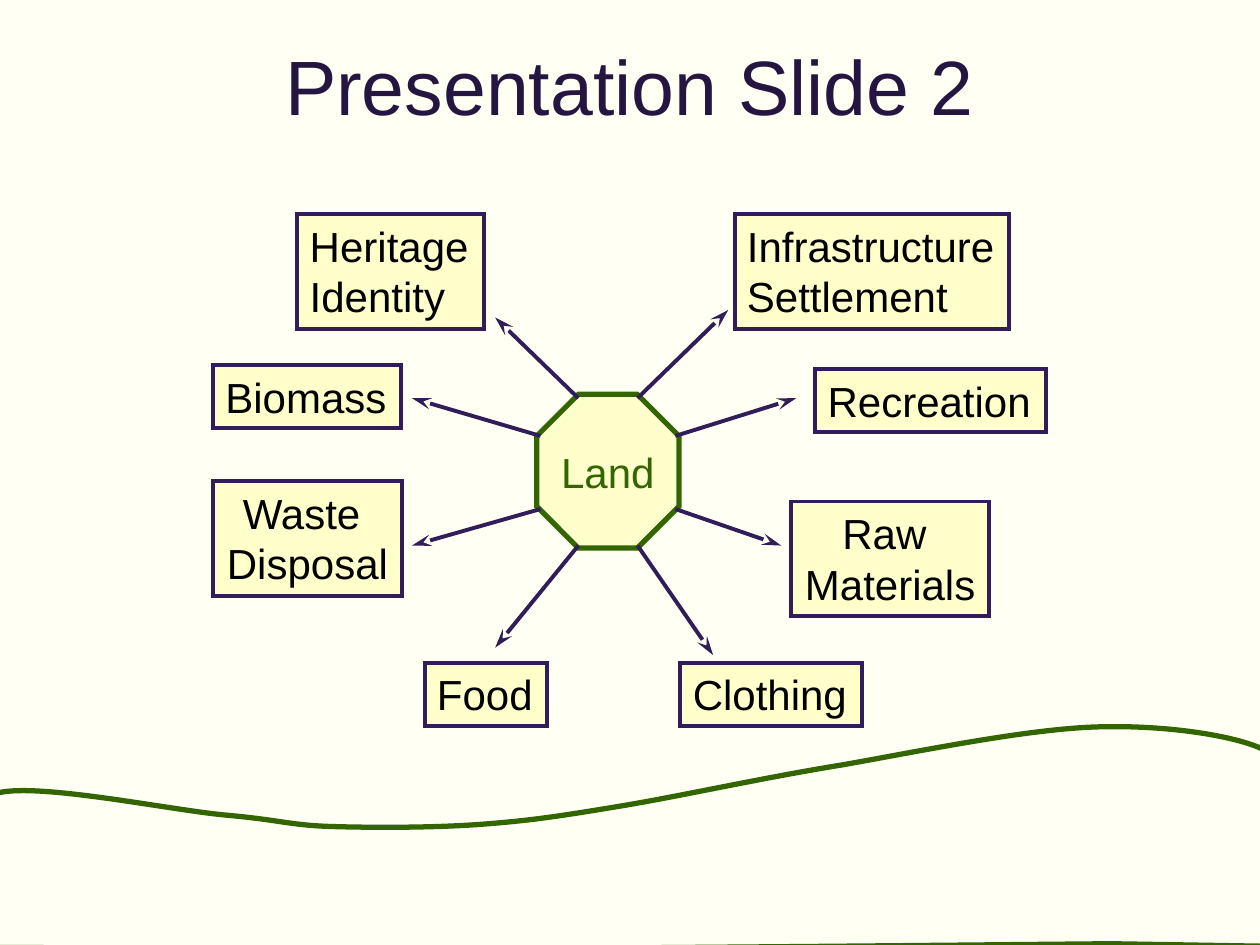
from lxml.etree import SubElement
from pptx import Presentation
from pptx.dml.color import RGBColor
from pptx.enum.shapes import MSO_CONNECTOR, MSO_SHAPE
from pptx.enum.text import MSO_ANCHOR as Anchor, MSO_AUTO_SIZE as AutoSize, PP_ALIGN as Align
from pptx.oxml.ns import qn
from pptx.util import Inches, Pt

COLORS = {"ground": "FFFFF3", "box": "FFFFCC", "edge": "301D59",
          "green": "336600", "title": "241541", "text": "000000"}
TITLE = "Presentation Slide 2"
HUB = ("Land", (4.26, 3.13, 1.13, 1.22))
ONE_LINE, TWO_LINES = 0.5, 0.91
USES = [
    (["Heritage", "Identity"], Align.LEFT, (2.36, 1.7, 1.48)),
    (["Infrastructure", "Settlement"], Align.LEFT, (5.83, 1.7, 2.18)),
    (["Biomass"], Align.LEFT, (1.69, 2.9, 1.49)),
    (["Recreation"], Align.LEFT, (6.47, 2.93, 1.83)),
    (["Waste ", "Disposal"], Align.CENTER, (1.69, 3.82, 1.5)),
    (["Raw ", "Materials"], Align.CENTER, (6.28, 3.98, 1.57)),
    (["Food"], Align.LEFT, (3.37, 5.26, 0.97)),
    (["Clothing"], Align.LEFT, (5.4, 5.26, 1.44)),
]
ARROWS = [
    ((4.59, 3.16), (3.93, 2.52)), ((5.06, 3.16), (5.78, 2.46)),
    ((4.29, 3.46), (3.27, 3.16)), ((5.36, 3.46), (6.32, 3.16)),
    ((4.29, 4.04), (3.27, 4.33)), ((5.36, 4.04), (6.2, 4.33)),
    ((4.59, 4.33), (3.93, 5.14)), ((5.06, 4.33), (5.66, 5.2)),
]
HILL_START = (-0.04, 6.3)
HILL_PIECES = [
    [(0.26, 6.2), (1.35, 6.43), (1.8, 6.47)],
    [(2.24, 6.51), (2.3, 6.55), (2.64, 6.56)],
    [(2.98, 6.57), (3.47, 6.57), (3.85, 6.54)],
    [(4.24, 6.51), (4.49, 6.47), (4.97, 6.39)],
    [(5.44, 6.31), (6.07, 6.17), (6.69, 6.07)],
    [(7.31, 5.96), (8.13, 5.79), (8.69, 5.77)],
    [(9.25, 5.75), (9.81, 5.84), (10.03, 5.95)],
    [(10.05, 6.46)], [(10.05, 7.51)], [(8.82, 7.49)],
    [(7.7, 7.5), (4.77, 7.53), (3.29, 7.53)],
    [(-0.04, 7.52)], [(-0.04, 7.07)],
]


def rgb(name):
    return RGBColor.from_string(COLORS[name])


def draw_line(shape, color, width):
    shape.line.color.rgb = rgb(color)
    shape.line.width = Pt(width)
    outline = shape.line._get_or_add_ln()
    SubElement(outline, qn("a:miter"), lim="800000")
    return outline


def paint(shape, fill, edge, width):
    shape.shadow.inherit = False
    shape.fill.solid()
    shape.fill.fore_color.rgb = rgb(fill)
    draw_line(shape, edge, width)


def write(shape, lines, align, color, size, anchor):
    frame = shape.text_frame
    frame.text = "\n".join(lines)
    frame.vertical_anchor = anchor
    for para in frame.paragraphs:
        para.alignment = align
        para.font.name = "Arial"
        para.font.size = Pt(size)
        para.font.color.rgb = rgb(color)


def add_hill(page):
    points = [(x * 100, y * 100) for piece in [[HILL_START]] + HILL_PIECES for x, y in piece]
    builder = page.shapes.build_freeform(*points[0], scale=Inches(1) / 100)
    builder.add_line_segments(points[1:], close=True)
    hill = builder.convert_to_shape()
    paint(hill, "ground", "green", 3)
    segments = iter(list(hill._element.iter(qn("a:lnTo"))))
    for piece in HILL_PIECES:
        steps = [next(segments) for point in piece]
        if len(steps) == 3:
            bend = steps[0].makeelement(qn("a:cubicBezTo"))
            steps[0].addprevious(bend)
            for step in steps:
                bend.append(step[0])
                step.getparent().remove(step)


def add_box(page, kind, place, lines, align, edge, width, color, anchor):
    box = page.shapes.add_shape(kind, *map(Inches, place))
    paint(box, "box", edge, width)
    write(box, lines, align, color, 24, anchor)
    box.text_frame.word_wrap = False
    return box


def add_arrow(page, start, end):
    arrow = page.shapes.add_connector(MSO_CONNECTOR.STRAIGHT, *map(Inches, start + end))
    outline = draw_line(arrow, "edge", 2.25)
    SubElement(outline, qn("a:tailEnd"), type="stealth", w="med", len="lg")
    SubElement(arrow._element.spPr, qn("a:effectLst"))


def main():
    """Build a slide showing the uses of land around a central octagon."""
    deck = Presentation()
    deck.slide_width, deck.slide_height = Inches(10), Inches(7.5)
    page = deck.slides.add_slide(deck.slide_layouts[5])
    page.background.fill.solid()
    page.background.fill.fore_color.rgb = rgb("ground")
    title = page.shapes.title
    title.left, title.top, title.width, title.height = map(Inches, (0.5, 0.3, 9, 0.74))
    write(title, [TITLE], Align.CENTER, "title", 44, Anchor.MIDDLE)
    add_hill(page)

    name, place = HUB
    hub = add_box(page, MSO_SHAPE.OCTAGON, place, [name], Align.CENTER,
                  "green", 3, "green", Anchor.MIDDLE)
    hub.adjustments[0] = 0.293
    for lines, align, place in USES:
        height = TWO_LINES if len(lines) == 2 else ONE_LINE
        box = add_box(page, MSO_SHAPE.RECTANGLE, place + (height,), lines, align,
                      "edge", 2.25, "text", Anchor.TOP)
        box.text_frame.auto_size = AutoSize.SHAPE_TO_FIT_TEXT
    for start, end in ARROWS:
        add_arrow(page, start, end)
    deck.save("out.pptx")


if __name__ == "__main__":
    main()
